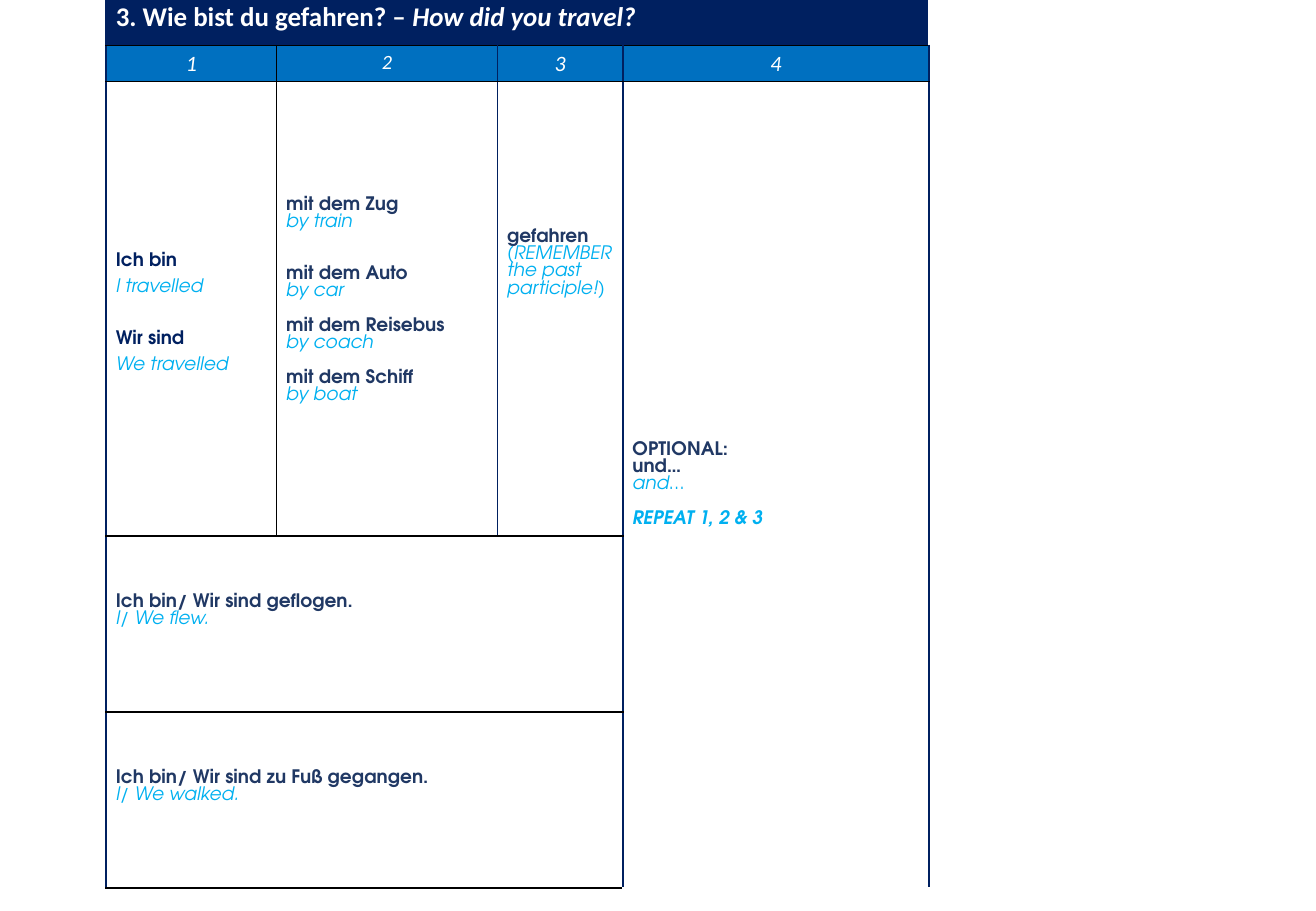
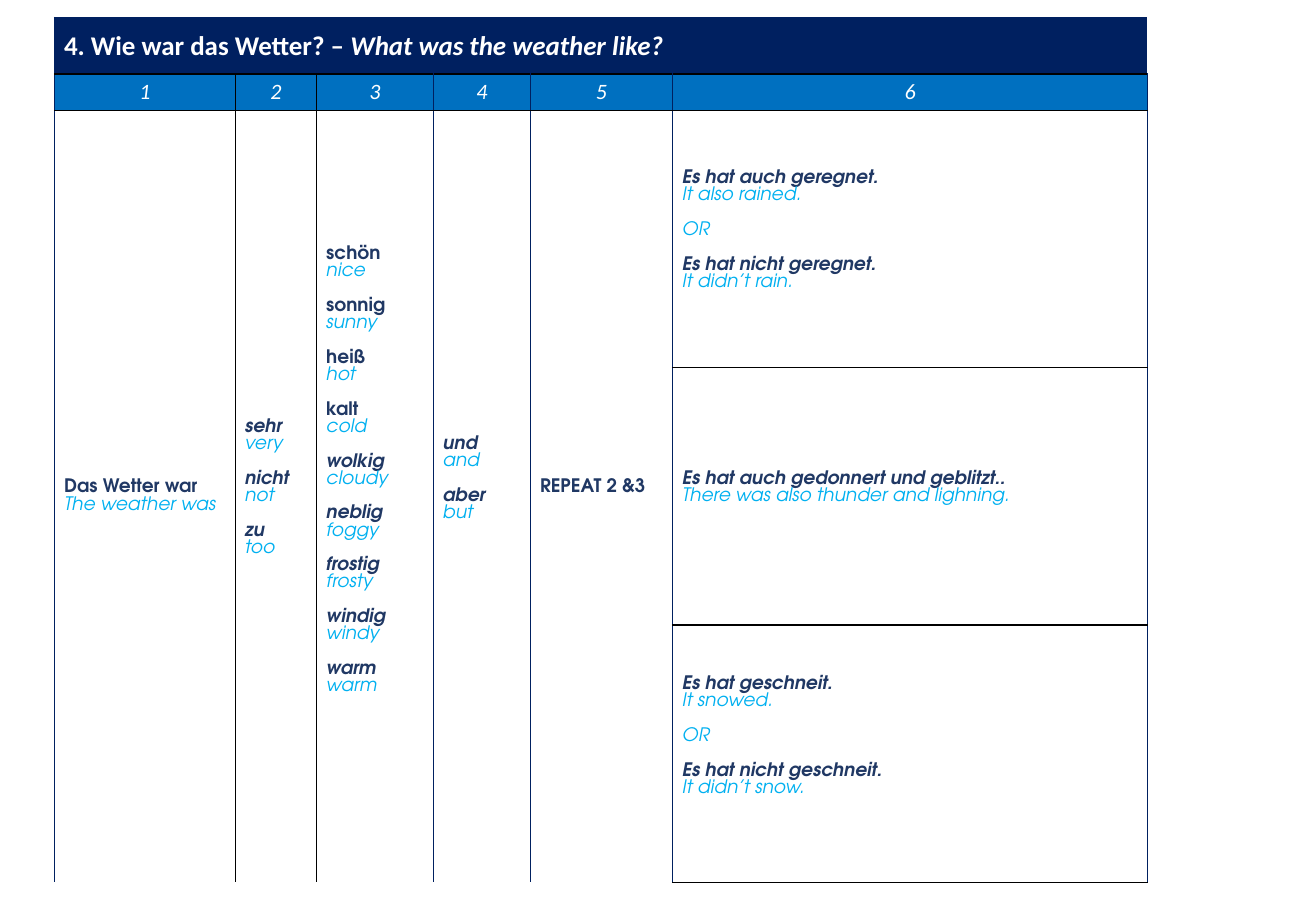
from dataclasses import dataclass

from lxml import etree
from pptx import Presentation
from pptx.dml.color import RGBColor
from pptx.enum.text import MSO_ANCHOR, PP_ALIGN
from pptx.oxml.ns import qn
from pptx.util import Cm, Pt

MIDDLE = MSO_ANCHOR.MIDDLE
TOP = MSO_ANCHOR.TOP
CENTER = PP_ALIGN.CENTER

NAVY = "002060"
INK = "203864"
BLUE = "0070C0"
SKY = "00B0F0"
WHITE = "FFFFFF"
BLACK = "000000"

TITLE_FONT = "Calibri"
BODY_FONT = "TeX Gyre Adventor"
TITLE_HEIGHT = 1.18
HEADER_HEIGHT = 0.74
SIDE_MARGIN = 0.2
END_MARGIN = 0.1
LINE_HEIGHT = 0.36  # one line of body text, in cm


@dataclass
class Line:
    text: str
    color: str = INK
    bold: bool = True
    italic: bool = False
    gap: float = 0  # lines left free above


@dataclass
class Block:
    """A body cell; free_below counts the lines kept free under its text."""
    row: int
    column: int
    lines: list[Line]
    rows: int = 1
    columns: int = 1
    free_below: float = 0
    spacing: float = 1.0


@dataclass
class Grid:
    left: float
    top: float
    widths: list[float]
    body_heights: list[float]
    question: str
    translation: str
    black_dividers: int  # inner vertical lines in black, from the left
    header_sizes: list[int]
    blocks: list[Block]


def english(text: str, bold: bool = False, gap: float = 0) -> Line:
    return Line(text, SKY, bold, True, gap)


def pair(german: str, translation: str, italic: bool = False,
         color: str = INK, gap: float = 1) -> list[Line]:
    return [Line(german, color, True, italic, gap), english(translation)]


def pairs(*phrases: tuple[str, str], italic: bool = False, color: str = INK) -> list[Line]:
    return [line for phrase in phrases for line in pair(*phrase, italic, color)]


def rgb(color: str) -> RGBColor:
    return RGBColor.from_string(color)


def set_font(font, name: str, size: float, color: str, bold: bool) -> None:
    font.name, font.size, font.bold = name, Pt(size), bold
    font.color.rgb = rgb(color)


def set_border(cell, side: str, color: str) -> None:
    line = etree.SubElement(cell._tc.get_or_add_tcPr(), qn(f"a:ln{side}"), w=str(Pt(1)))
    fill = etree.SubElement(line, qn("a:solidFill"))
    etree.SubElement(fill, qn("a:srgbClr"), val=color)


def outline(table, grid: Grid, row: int, column: int, rows: int, columns: int) -> None:
    """Draw the outer edges of a span of cells."""
    def upright(edge: int) -> str:
        return BLACK if 0 < edge <= grid.black_dividers else NAVY

    last_row, last_column = row + rows - 1, column + columns - 1
    for r in range(row, last_row + 1):
        for c in range(column, last_column + 1):
            cell = table.cell(r, c)
            if c == column:
                set_border(cell, "L", upright(c))
            if c == last_column:
                set_border(cell, "R", upright(c + 1))
            if r == row:
                set_border(cell, "T", BLACK if r else NAVY)
            if r == last_row:
                set_border(cell, "B", BLACK)


def prepare_cell(table, grid: Grid, row: int, column: int, rows: int = 1,
                 columns: int = 1, fill: str | None = None, anchor=MIDDLE):
    outline(table, grid, row, column, rows, columns)
    cell = table.cell(row, column)
    if rows * columns > 1:
        cell.merge(table.cell(row + rows - 1, column + columns - 1))
    if fill:
        cell.fill.solid()
        cell.fill.fore_color.rgb = rgb(fill)
    else:
        cell.fill.background()
    cell.margin_left = cell.margin_right = Cm(SIDE_MARGIN)
    cell.margin_top = cell.margin_bottom = Cm(END_MARGIN)
    cell.vertical_anchor = anchor
    return cell


def add_title(table, grid: Grid) -> None:
    cell = prepare_cell(table, grid, 0, 0, columns=len(grid.widths), fill=NAVY)
    paragraph = cell.text_frame.paragraphs[0]
    set_font(paragraph.font, TITLE_FONT, 16, WHITE, True)
    paragraph.add_run().text = f"{grid.question} – "
    translation = paragraph.add_run()
    translation.text = grid.translation
    translation.font.italic = True


def add_header(table, grid: Grid) -> None:
    for column, size in enumerate(grid.header_sizes):
        cell = prepare_cell(table, grid, 1, column, fill=BLUE, anchor=TOP)
        paragraph = cell.text_frame.paragraphs[0]
        paragraph.text = str(column + 1)
        paragraph.alignment = CENTER
        set_font(paragraph.font, TITLE_FONT, size, WHITE, False)
        paragraph.font.italic = True


def add_block(table, grid: Grid, block: Block) -> None:
    cell = prepare_cell(table, grid, block.row + 2, block.column, block.rows, block.columns)
    cell.margin_bottom = Cm(END_MARGIN + block.free_below * LINE_HEIGHT)
    frame = cell.text_frame
    for index, line in enumerate(block.lines):
        paragraph = frame.add_paragraph() if index else frame.paragraphs[0]
        paragraph.text = line.text
        paragraph.line_spacing = block.spacing
        if index and line.gap:
            paragraph.space_before = Cm(line.gap * block.spacing * LINE_HEIGHT)
        set_font(paragraph.font, BODY_FONT, 11, line.color, line.bold)
        paragraph.font.italic = line.italic


def add_grid(slide, grid: Grid) -> None:
    heights = [TITLE_HEIGHT, HEADER_HEIGHT, *grid.body_heights]
    frame = slide.shapes.add_table(
        len(heights), len(grid.widths), Cm(grid.left), Cm(grid.top),
        Cm(sum(grid.widths)), Cm(sum(heights)))
    table = frame.table
    table.first_row = table.horz_banding = False
    for column, width in zip(table.columns, grid.widths):
        column.width = Cm(width)
    for row, height in zip(table.rows, heights):
        row.height = Cm(height)
    add_title(table, grid)
    add_header(table, grid)
    for block in grid.blocks:
        add_block(table, grid, block)


TRAVEL = Grid(
    left=2.22, top=-0.23,
    widths=[3.56, 4.62, 2.62, 6.4],
    body_heights=[9.5, 3.68, 3.68],
    question="3. Wie bist du gefahren?", translation="How did you travel?",
    black_dividers=1,
    header_sizes=[13, 12, 13, 13],
    blocks=[
        Block(0, 0, pairs(("Ich bin", "I travelled"), ("Wir sind", "We travelled"),
                          color=NAVY), spacing=1.5),
        Block(0, 1, [
            *pair("mit dem Zug", "by train"),
            *pair("mit dem Auto", "by car", gap=2),
            *pairs(("mit dem Reisebus", "by coach"), ("mit dem Schiff", "by boat")),
        ], free_below=1),
        Block(0, 2, pair("gefahren", "(REMEMBER the past participle!)"), free_below=5.3),
        Block(0, 3, [
            Line("OPTIONAL:"), Line("und…"), english("and…"),
            english("REPEAT 1, 2 & 3", bold=True, gap=1),
        ], rows=3),
        Block(1, 0, pair("Ich bin/ Wir sind geflogen.", "I/ We flew."),
              columns=3, free_below=1.5),
        Block(2, 0, pair("Ich bin/ Wir sind zu Fuß gegangen.", "I/ We walked."),
              columns=3, free_below=1.5),
    ],
)

WEATHER = Grid(
    left=1.14, top=0.37,
    widths=[3.78, 1.7, 2.44, 2.03, 2.97, 9.93],
    body_heights=[5.38] * 3,
    question="4. Wie war das Wetter?", translation="What was the weather like?",
    black_dividers=2,
    header_sizes=[13] * 6,
    blocks=[
        Block(0, 0, pair("Das Wetter war", "The weather was"), rows=3),
        Block(0, 1, pairs(("sehr", "very"), ("nicht", "not"), ("zu", "too"), italic=True),
              rows=3, free_below=1),
        Block(0, 2, [
            *pairs(("schön", "nice"), ("sonnig", "sunny"), ("heiß", "hot"), ("kalt", "cold")),
            *pairs(("wolkig", "cloudy"), ("neblig", "foggy"), ("frostig", "frosty"),
                   ("windig", "windy"), ("warm", "warm"), italic=True),
        ], rows=3, free_below=3),
        Block(0, 3, pairs(("und", "and"), ("aber", "but"), italic=True),
              rows=3, free_below=2),
        Block(0, 4, [Line("REPEAT 2 &3")], rows=3, free_below=1),
        Block(0, 5, [
            *pair("Es hat auch geregnet.", "It also rained.", italic=True),
            english("OR", gap=1),
            *pair("Es hat nicht geregnet.", "It didn’t rain.", italic=True),
        ], free_below=1),
        Block(1, 5, pair("Es hat auch gedonnert und geblitzt..",
                         "There was also thunder and lighning.", italic=True), free_below=1),
        Block(2, 5, [
            *pair("Es hat geschneit.", "It snowed.", italic=True),
            english("OR", gap=1),
            *pair("Es hat nicht geschneit.", "It didn’t snow.", italic=True),
        ], free_below=2),
    ],
)


def main() -> None:
    presentation = Presentation()
    presentation.slide_width, presentation.slide_height = Cm(27.51), Cm(19.05)
    blank_layout = presentation.slide_layouts[6]
    for grid in (TRAVEL, WEATHER):
        add_grid(presentation.slides.add_slide(blank_layout), grid)
    presentation.save("out.pptx")


if __name__ == "__main__":
    main()
